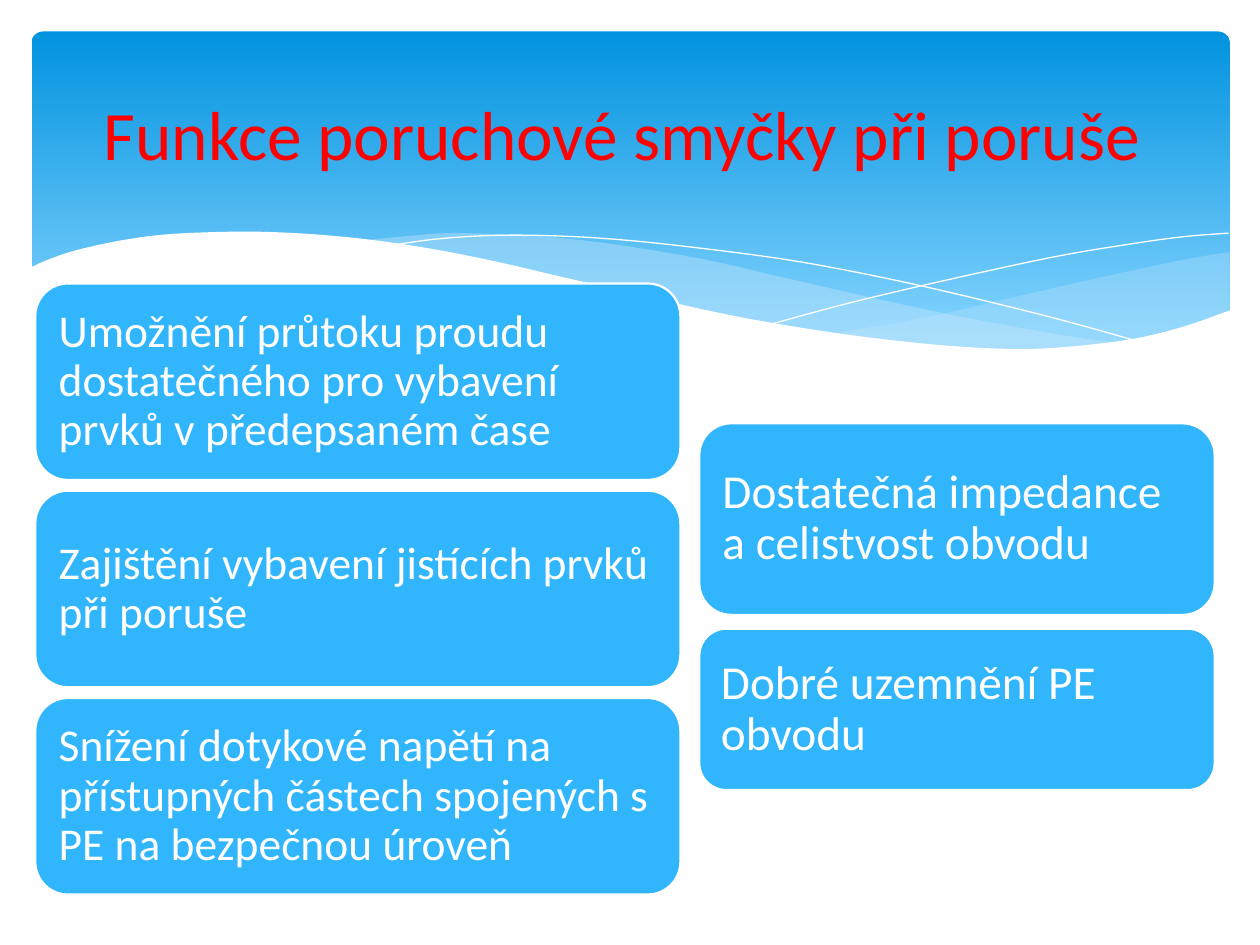
from lxml import etree
from pptx import Presentation
from pptx.dml.color import RGBColor
from pptx.enum import shapes, text
from pptx.oxml.ns import qn
from pptx.util import Inches, Pt

COLORS = {
    "sky_top": "0293E0",
    "sky_bottom": "83D3FE",
    "wave": "C6E7FC",
    "box": "31B6FD",
    "white": "FFFFFF",
    "title": "FF0000",
}
FONT = "Calibri"

# Each wave is a list of curves, given by the points they run through.
RIGHT_WAVE = [
    [(9.76, 2), (9.35, 2.07), (8.61, 2.23), (7.79, 2.42), (7.29, 2.53), (6.61, 2.65)],
    [(6.61, 2.65), (7.19, 2.72), (7.69, 2.77), (8.14, 2.78), (8.63, 2.75),
     (9.05, 2.69), (9.42, 2.59), (9.76, 2.47)],
]
MIDDLE_WAVE = [
    [(8.93, 2.73), (8.37, 2.65), (7.41, 2.47), (6.29, 2.22), (5.69, 2.08),
     (5.14, 1.98), (4.65, 1.91), (4.2, 1.87), (3.61, 1.85), (3.28, 1.87), (2.86, 1.91)],
    [(2.86, 1.91), (3.42, 1.99), (4.04, 2.11), (4.49, 2.22), (5.3, 2.4),
     (6.01, 2.55), (6.65, 2.66), (7.22, 2.74), (7.73, 2.77), (8.18, 2.78),
     (8.57, 2.77), (8.93, 2.73)],
]
FALLING_LINE = [
    [(3.09, 1.95), (3.44, 1.9), (3.87, 1.87), (4.33, 1.87), (4.89, 1.9),
     (5.56, 1.97), (6.36, 2.08), (7.27, 2.26), (8.31, 2.51), (9.07, 2.72)],
]
RISING_LINE = [
    [(6.13, 2.57), (6.72, 2.41), (7.48, 2.23), (8.36, 2.04), (8.95, 1.94),
     (9.38, 1.88), (9.75, 1.85)],
]
FRONT_WAVE = [
    [(9.77, 2.46), (9.4, 2.59), (8.99, 2.69), (8.5, 2.75), (8.09, 2.77),
     (7.61, 2.75), (7.08, 2.7), (6.48, 2.62), (5.79, 2.5), (5.03, 2.33),
     (4.47, 2.2), (3.91, 2.07), (3.4, 1.97), (2.92, 1.9), (2.5, 1.86),
     (2.11, 1.84), (1.77, 1.84), (1.32, 1.86), (0.95, 1.91), (0.59, 1.99),
     (0.36, 2.07), (0.23, 2.13)],
    [(0.23, 3.29), (9.77, 3.29)],
]

FUNCTIONS = [
    "Umožnění průtoku proudu dostatečného pro vybavení prvků v předepsaném čase",
    "Zajištění vybavení jistících prvků při poruše",
    "Snížení dotykové napětí na přístupných částech spojených s PE na bezpečnou úroveň",
]


def color(name):
    return RGBColor.from_string(COLORS[name])


def smooth(points, steps=5):
    """Return points along a Catmull-Rom curve through the given points."""
    if len(points) == 2:
        return points
    padded = [points[0], *points, points[-1]]
    curve = [points[0]]
    for a, b, c, d in zip(padded, padded[1:], padded[2:], padded[3:]):
        for i in range(1, steps + 1):
            t = i / steps
            curve.append(tuple(
                (2 * q + (r - p) * t + (2 * p - 5 * q + 4 * r - s) * t ** 2
                 + (3 * q - p - 3 * r + s) * t ** 3) / 2
                for p, q, r, s in zip(a, b, c, d)))
    return curve


def add_curves(slide, curves, close):
    points = [(Inches(x), Inches(y)) for curve in curves for x, y in smooth(curve)]
    builder = slide.shapes.build_freeform(*points[0])
    builder.add_line_segments(points[1:], close=close)
    s = builder.convert_to_shape()
    s.shadow.inherit = False
    return s


def add_wave(slide, curves, fill, opacity=100):
    s = add_curves(slide, curves, True)
    s.fill.solid()
    s.fill.fore_color.rgb = color(fill)
    s.line.fill.background()
    if opacity < 100:
        rgb = s.fill._xPr.find(".//" + qn("a:srgbClr"))
        etree.SubElement(rgb, qn("a:alpha"), val=str(opacity * 1000))


def add_wave_line(slide, curves):
    s = add_curves(slide, curves, False)
    s.fill.background()
    s.line.color.rgb = color("white")
    s.line.width = Pt(0)


def add_round_rect(slide, left, top, width, height):
    s = slide.shapes.add_shape(shapes.MSO_SHAPE.ROUNDED_RECTANGLE, Inches(left),
                               Inches(top), Inches(width), Inches(height))
    s.shadow.inherit = False
    return s


def add_sky(slide):
    s = add_round_rect(slide, 0.25, 0.25, 9.51, 2.7)
    s.adjustments[0] = 0.034
    s.line.fill.background()
    s.fill.gradient()
    s.fill.gradient_angle = 270
    stops = zip(s.fill.gradient_stops, (0, 0.9), ("sky_top", "sky_bottom"))
    for stop, position, name in stops:
        stop.position = position
        stop.color.rgb = color(name)


def write(shape, content, size, name, align):
    tf = shape.text_frame
    tf.word_wrap = True
    tf.vertical_anchor = text.MSO_ANCHOR.MIDDLE
    p = tf.paragraphs[0]
    p.text = content
    p.alignment = align
    p.font.name = FONT
    p.font.size = Pt(size)
    p.font.color.rgb = color(name)
    return tf


def add_title(slide, content):
    s = slide.shapes.add_textbox(Inches(0.5), Inches(0.37), Inches(9), Inches(1.37))
    write(s, content, 39.6, "title", text.PP_ALIGN.CENTER)


def add_box(slide, left, top, width, height, content, size):
    s = add_round_rect(slide, left, top, width, height)
    s.fill.solid()
    s.fill.fore_color.rgb = color("box")
    s.line.color.rgb = color("white")
    s.line.width = Pt(1.25)
    tf = write(s, content, size, "white", text.PP_ALIGN.LEFT)
    tf.paragraphs[0].line_spacing = 0.9
    tf.margin_left = tf.margin_right = Inches(0.11)
    tf.margin_top = tf.margin_bottom = Inches(0.11)


def main():
    prs = Presentation()
    prs.slide_width, prs.slide_height = Inches(10), Inches(7.5)
    slide = prs.slides.add_slide(prs.slide_layouts[6])

    add_sky(slide)
    add_wave(slide, RIGHT_WAVE, "wave", 29)
    add_wave(slide, MIDDLE_WAVE, "wave", 40)
    add_wave_line(slide, FALLING_LINE)
    add_wave_line(slide, RISING_LINE)
    add_wave(slide, FRONT_WAVE, "white")

    add_title(slide, "Funkce poruchové smyčky při poruše ")
    for i, content in enumerate(FUNCTIONS):
        add_box(slide, 0.28, 2.25 + 1.645 * i, 5.12, 1.56, content, 26)
    add_box(slide, 5.55, 3.36, 4.09, 1.52, "Dostatečná impedance a celistvost obvodu", 27)
    add_box(slide, 5.55, 4.99, 4.09, 1.28, "Dobré uzemnění PE obvodu", 27)

    prs.save("out.pptx")


if __name__ == "__main__":
    main()
